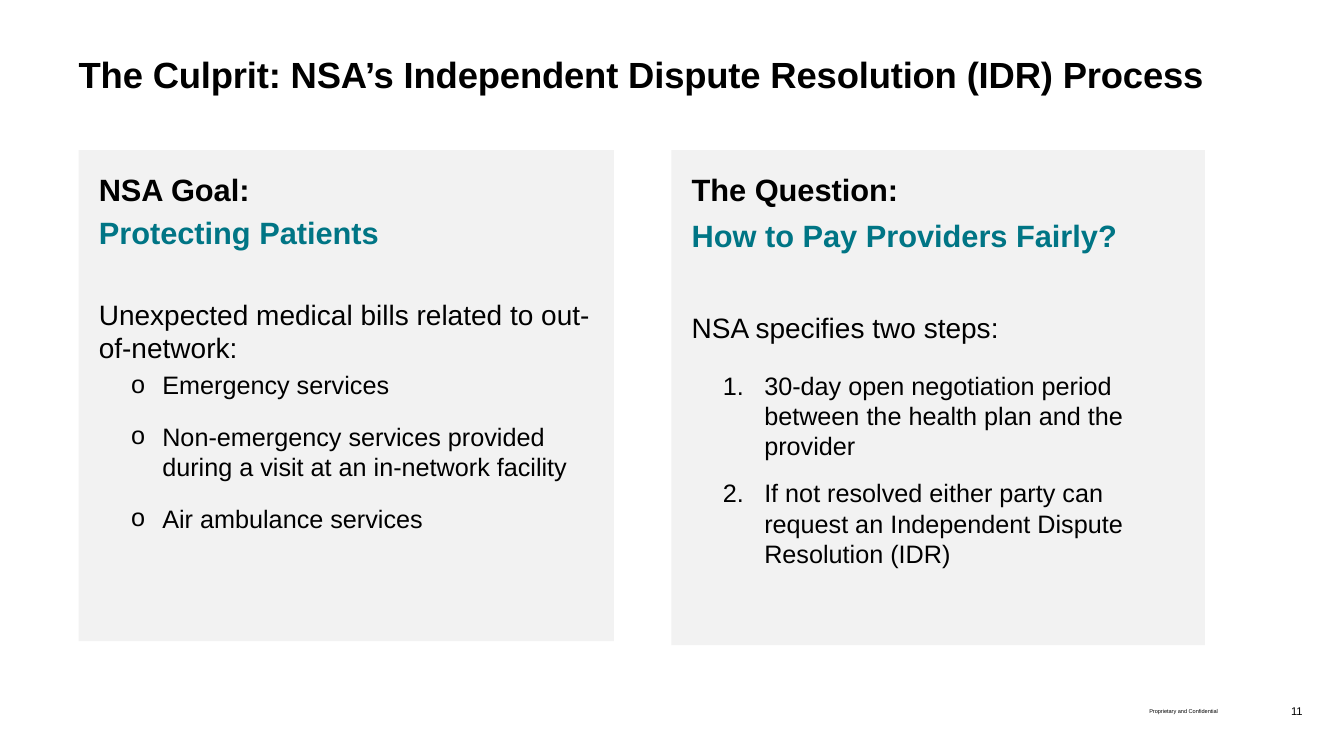
from lxml.etree import SubElement
from pptx import Presentation
from pptx.dml.color import RGBColor
from pptx.enum.shapes import MSO_SHAPE
from pptx.enum.text import MSO_ANCHOR, PP_ALIGN
from pptx.oxml.ns import qn
from pptx.util import Inches, Pt

BLACK, TEAL, PANEL_GREY = "000000", "007585", "F2F2F2"


def color(hex_string):
    return RGBColor.from_string(hex_string)


class SlideBuilder:
    font = "Arial"
    panel_padding = 0.2

    def __init__(self, slide):
        self.slide = slide

    def set_frame(self, frame, padding, anchor):
        frame.word_wrap = True
        frame.vertical_anchor = anchor
        frame.margin_left = frame.margin_right = Inches(padding)
        frame.margin_top = frame.margin_bottom = Inches(padding)

    def add_run(self, paragraph, text, size, hex_string=BLACK, bold=False):
        run = paragraph.add_run()
        run.text = text
        run.font.name = self.font
        run.font.size = Pt(size)
        run.font.bold = bold
        run.font.color.rgb = color(hex_string)
        return run

    def label(self, box, text, size, bold=False, align=PP_ALIGN.LEFT, anchor=MSO_ANCHOR.MIDDLE):
        frame = self.slide.shapes.add_textbox(*map(Inches, box)).text_frame
        self.set_frame(frame, 0, anchor)
        frame.paragraphs[0].alignment = align
        return self.add_run(frame.paragraphs[0], text, size, bold=bold)

    def panel(self, box):
        panel = self.slide.shapes.add_shape(MSO_SHAPE.RECTANGLE, *map(Inches, box))
        panel.shadow.inherit = False
        panel.fill.solid()
        panel.fill.fore_color.rgb = color(PANEL_GREY)
        panel.line.fill.background()
        self.set_frame(panel.text_frame, self.panel_padding, MSO_ANCHOR.TOP)
        return panel.text_frame

    def paragraph(self, frame, text, size, before=0, hex_string=BLACK, bold=False):
        first = frame.paragraphs[0]
        paragraph = frame.add_paragraph() if first.runs else first
        paragraph.alignment = PP_ALIGN.LEFT
        paragraph.space_before = Pt(before)
        self.add_run(paragraph, text, size, hex_string, bold)
        return paragraph

    def items(self, frame, texts, first_gap, gap, indent, hanging, marker, **marker_values):
        for index, text in enumerate(texts):
            paragraph = self.paragraph(frame, text, 18, gap if index else first_gap)
            properties = paragraph._p.get_or_add_pPr()
            properties.set("marL", str(Inches(indent)))
            properties.set("indent", str(-Inches(hanging)))
            SubElement(properties, qn("a:buFont"), typeface=self.font)
            SubElement(properties, qn(marker), **marker_values)


def main():
    presentation = Presentation()
    presentation.slide_width, presentation.slide_height = Inches(13.33), Inches(7.5)
    builder = SlideBuilder(presentation.slides.add_slide(presentation.slide_layouts[6]))

    # Title
    title = builder.label(
        (0.78, 0.52, 11.71, 0.44),
        "The Culprit: NSA’s Independent Dispute Resolution (IDR) Process",
        26, bold=True, anchor=MSO_ANCHOR.TOP)
    title.font._element.set("spc", "-13")

    # Panels: box, heading, answer and its gap, lead-in and its gap
    panels = [
        ((0.78, 1.49, 5.31, 4.87), "NSA Goal:", "Protecting Patients", 4.4,
         "Unexpected medical bills related to out-of-network:", 33.5),
        ((6.66, 1.49, 5.29, 4.91), "The Question:", "How to Pay Providers Fairly?", 7,
         "NSA specifies two steps:", 40.2),
    ]
    frames = []
    for box, heading, answer, answer_gap, lead_in, lead_in_gap in panels:
        frame = builder.panel(box)
        builder.paragraph(frame, heading, 22, bold=True)
        builder.paragraph(frame, answer, 22, answer_gap, TEAL, bold=True)
        builder.paragraph(frame, lead_in, 20, lead_in_gap)
        frames.append(frame)
    goal, question = frames

    # Covered services
    builder.items(goal, [
        "Emergency services",
        "Non-emergency services provided during a visit at an in-network facility",
        "Air ambulance services",
    ], 3.4, 15.4, 0.63, 0.31, "a:buChar", char="o")

    # Payment steps
    builder.items(question, [
        "30-day open negotiation period between the health plan and the provider",
        "If not resolved either party can request an Independent Dispute Resolution (IDR)",
    ], 18.7, 12, 0.72, 0.41, "a:buAutoNum", type="arabicPeriod")

    # Footer
    builder.label((6.57, 6.86, 5.51, 0.4), "Proprietary and Confidential", 4, align=PP_ALIGN.RIGHT)
    builder.label((12.48, 6.85, 0.44, 0.4), "11", 8, align=PP_ALIGN.RIGHT)

    presentation.save("out.pptx")


if __name__ == "__main__":
    main()
